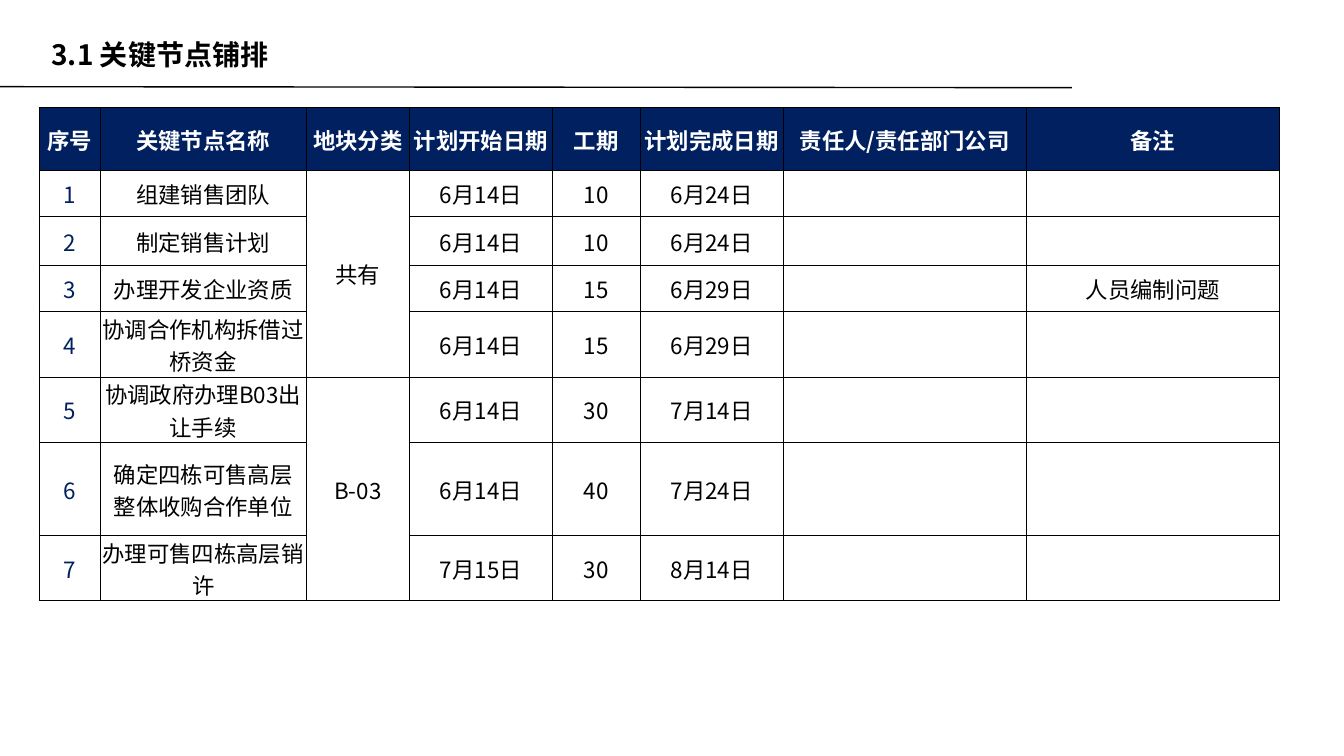
from lxml import etree
from pptx import Presentation
from pptx import util as u
from pptx.dml.color import RGBColor
from pptx.enum import shapes, text
from pptx.oxml.ns import qn

FONT = "Noto Sans CJK SC"
NAVY, BLACK, WHITE = "002060", "000000", "FFFFFF"
TITLE = "3.1 关键节点铺排"
HEAD = ["序号", "关键节点名称", "地块分类", "计划开始日期", "工期",
        "计划完成日期", "责任人/责任部门公司", "备注"]
# name, start, days, finish, remark
TASKS = [
    ("组建销售团队", "6月14日", "10", "6月24日", ""),
    ("制定销售计划", "6月14日", "10", "6月24日", ""),
    ("办理开发企业资质", "6月14日", "15", "6月29日", "人员编制问题"),
    ("协调合作机构拆借过桥资金", "6月14日", "15", "6月29日", ""),
    ("协调政府办理B03出让手续", "6月14日", "30", "7月14日", ""),
    ("确定四栋可售高层\v整体收购合作单位", "6月14日", "40", "7月24日", ""),
    ("办理可售四栋高层销许", "7月15日", "30", "8月14日", ""),
]
PLOTS = {1: ("共有", 4), 5: ("B-03", 3)}  # first row: label, rows spanned
COLS = [0.6, 2.05, 1.02, 1.42, 0.87, 1.42, 2.41, 2.51]
ROWS = [0.62, 0.46, 0.48, 0.46, 0.62, 0.62, 0.92, 0.62]


def color(code):
    return RGBColor.from_string(code)


def style(para, size, code, bold, align):
    para.alignment = align
    for run in para.runs:
        look = {"name": FONT, "size": u.Pt(size), "bold": bold}
        for key, val in look.items():
            setattr(run.font, key, val)
        run.font.color.rgb = color(code)
        east = etree.SubElement(run.font._element, qn("a:ea"))
        east.set("typeface", FONT)


def border(cell, sides):
    """Draw cell edges; sides maps L, R, T and B to widths in points."""
    props = cell._tc.get_or_add_tcPr()
    for side, width in sides.items():
        line = etree.SubElement(props, qn("a:ln" + side), w=str(u.Pt(width)))
        fill = etree.SubElement(line, qn("a:solidFill"))
        etree.SubElement(fill, qn("a:srgbClr"), val=BLACK)


def add_title(slide):
    title = slide.shapes.title
    box = {"left": 0.41, "top": 0.32, "width": 10.82, "height": 0.55}
    for key, val in box.items():
        setattr(title, key, u.Inches(val))
    frame = title.text_frame
    frame.text = TITLE
    frame.auto_size = text.MSO_AUTO_SIZE.NONE
    frame.vertical_anchor = text.MSO_ANCHOR.TOP
    style(frame.paragraphs[0], 20, BLACK, True, text.PP_ALIGN.LEFT)


def add_rule(slide):
    ends = [u.Inches(n) for n in (0, 0.86, 10.63, 0.87)]
    rule = slide.shapes.add_connector(shapes.MSO_CONNECTOR.STRAIGHT, *ends)
    rule.line.color.rgb = color(BLACK)
    rule.line.width = u.Pt(1)
    etree.SubElement(rule._element.spPr, qn("a:effectLst"))


def add_plan(slide):
    grid = [HEAD]
    for num, (name, start, days, end, note) in enumerate(TASKS, 1):
        plot = PLOTS.get(num, ("", 0))[0]
        grid.append([str(num), name, plot, start, days, end, "", note])
    area = [u.Inches(n) for n in (0.39, 1.07, sum(COLS), sum(ROWS))]
    table = slide.shapes.add_table(len(ROWS), len(COLS), *area).table
    table.first_row = table.horz_banding = False
    for col, width in zip(table.columns, COLS):
        col.width = u.Inches(width)
    for row, height in zip(table.rows, ROWS):
        row.height = u.Inches(height)
    edge = u.Inches(0.01)
    form = {"margin_left": edge, "margin_right": edge, "margin_top": edge,
            "margin_bottom": 0, "vertical_anchor": text.MSO_ANCHOR.MIDDLE}
    for r, words in enumerate(grid):
        for c, word in enumerate(words):
            cell = table.cell(r, c)
            for key, val in form.items():
                setattr(cell, key, val)
            border(cell, {"L": 0.5 if c else 1,
                          "R": 1 if c == len(COLS) - 1 else 0.5,
                          "T": 0.5 if r else 1, "B": 0.5})
            if r == 0:
                cell.fill.solid()
                cell.fill.fore_color.rgb = color(NAVY)
            else:
                cell.fill.background()
            cell.text = word
            ink = WHITE if r == 0 else BLACK if c else NAVY
            style(cell.text_frame.paragraphs[0], 16, ink, r == 0,
                  text.PP_ALIGN.CENTER)
    for top, (_, span) in PLOTS.items():
        table.cell(top, 2).merge(table.cell(top + span - 1, 2))


def main():
    deck = Presentation()
    deck.slide_width, deck.slide_height = u.Inches(13.33), u.Inches(7.5)
    slide = deck.slides.add_slide(deck.slide_layouts[5])
    add_rule(slide)
    add_title(slide)
    add_plan(slide)
    deck.save("out.pptx")


if __name__ == "__main__":
    main()
